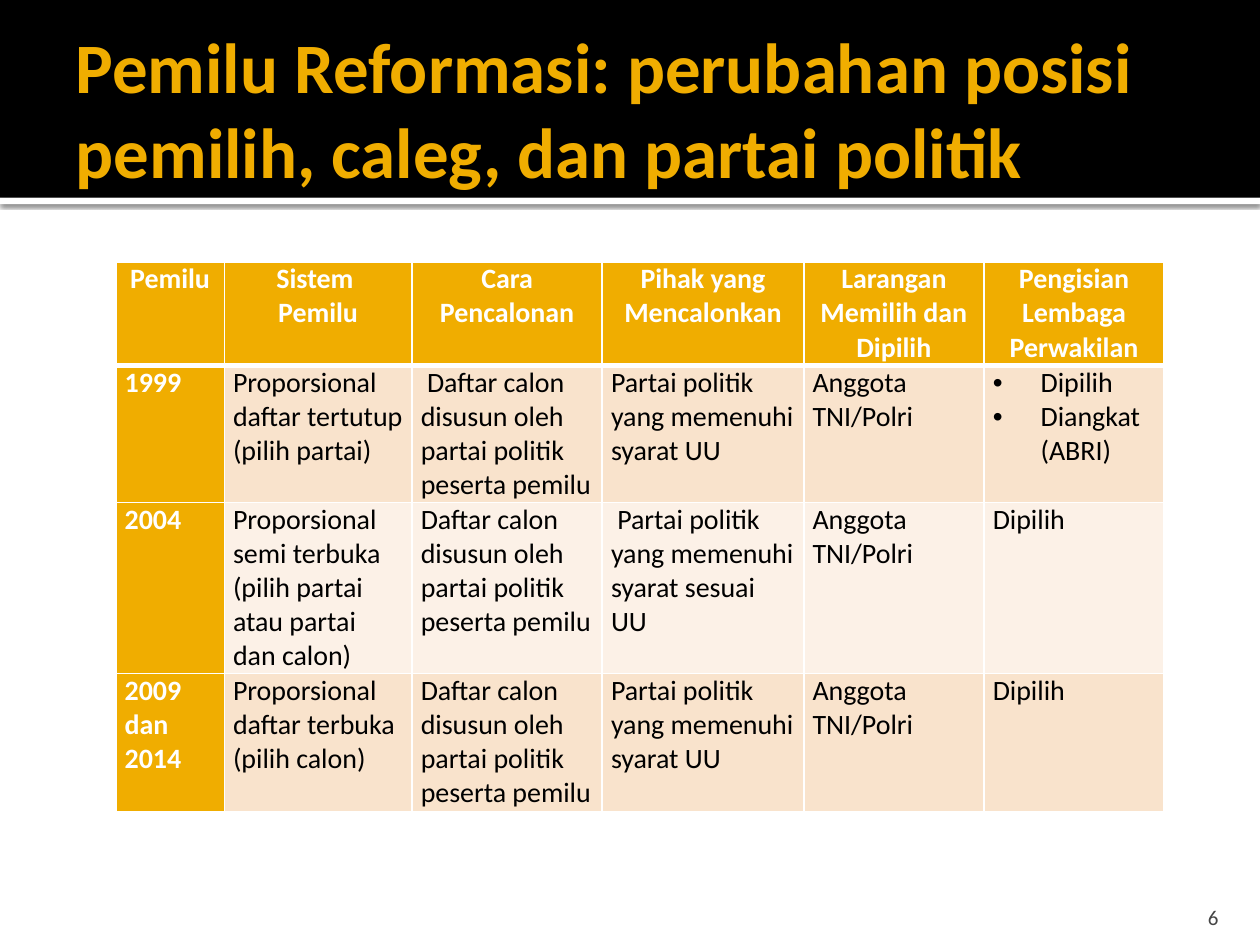
from dataclasses import dataclass

import pptx
import pptx.dml.color
import pptx.enum.shapes
import pptx.enum.text
import pptx.oxml
import pptx.oxml.ns
import pptx.util

RGBColor = pptx.dml.color.RGBColor
Inches = pptx.util.Inches
Pt = pptx.util.Pt
PP_ALIGN = pptx.enum.text.PP_ALIGN
MSO_ANCHOR = pptx.enum.text.MSO_ANCHOR

BLACK = RGBColor(0x00, 0x00, 0x00)
WHITE = RGBColor(0xFF, 0xFF, 0xFF)
GOLD = RGBColor(0xF0, 0xAD, 0x00)
PEACH = RGBColor(0xF9, 0xE3, 0xCC)
CREAM = RGBColor(0xFC, 0xF1, 0xE7)
GREY = RGBColor(0x45, 0x45, 0x45)
FONT = "Calibri"
NS = pptx.oxml.ns.nsdecls("a")

TITLE = "Pemilu Reformasi: perubahan posisi pemilih, caleg, dan partai politik"
CANDIDATES = "Daftar calon disusun oleh partai politik peserta pemilu"
PARTIES = "Partai politik yang memenuhi syarat UU"
BARRED = "Anggota TNI/Polri"
HEADERS = ["Pemilu", "Sistem \nPemilu", "Cara Pencalonan", "Pihak yang Mencalonkan",
           "Larangan Memilih dan Dipilih", "Pengisian Lembaga Perwakilan"]
COLUMN_WIDTHS = [0.86, 1.49, 1.51, 1.6, 1.43, 1.43]
ROW_HEIGHTS = [0.82, 0.82, 1.1, 1.1]


@dataclass
class Election:
    year: str
    system: str
    candidates: str = CANDIDATES
    parties: str = PARTIES
    barred: str = BARRED
    seats: str = "Dipilih"

    def cells(self) -> list[str]:
        return [self.year, self.system, self.candidates,
                self.parties, self.barred, self.seats]


@dataclass
class Bar:
    top: float
    height: float
    color: RGBColor
    shadow: bool = False


ELECTIONS = [
    Election("1999", "Proporsional daftar tertutup (pilih partai)",
             candidates=" " + CANDIDATES, seats="Dipilih\nDiangkat (ABRI)"),
    Election("2004", "Proporsional semi terbuka (pilih partai atau partai dan calon)",
             parties=" Partai politik yang memenuhi syarat sesuai UU"),
    Election("2009 dan 2014", "Proporsional daftar terbuka (pilih calon)"),
]
BARS = [Bar(1.57, 0.05, WHITE, shadow=True), Bar(0, 1.57, BLACK)]


def format_text(tf, size: float, color: RGBColor, bold: bool = False,
                align=PP_ALIGN.LEFT) -> None:
    for p in tf.paragraphs:
        p.alignment = align
        for r in p.runs:
            r.font.name, r.font.size, r.font.bold = FONT, Pt(size), bold
            r.font.color.rgb = color


def set_margins(box, left: float, top: float, right: float, bottom: float) -> None:
    box.margin_left, box.margin_top = Inches(left), Inches(top)
    box.margin_right, box.margin_bottom = Inches(right), Inches(bottom)


def add_bar(s, bar: Bar, width: int, layer: int) -> None:
    """Draw a full-width bar behind the placeholders."""
    sp = s.shapes.add_shape(pptx.enum.shapes.MSO_SHAPE.RECTANGLE, 0,
                            Inches(bar.top), width, Inches(bar.height))
    sp.shadow.inherit = False
    sp.fill.solid()
    sp.fill.fore_color.rgb = bar.color
    sp.line.fill.background()
    if bar.shadow:
        effects = sp.element.spPr.find(pptx.oxml.ns.qn("a:effectLst"))
        effects.append(pptx.oxml.parse_xml(
            f'<a:outerShdw {NS} blurRad="{Pt(2.5)}" dist="{Pt(0.8)}" dir="5400000" '
            'algn="tl" rotWithShape="0"><a:srgbClr val="000000">'
            '<a:alpha val="60000"/></a:srgbClr></a:outerShdw>'))
    s.shapes._spTree.insert(2 + layer, sp.element)


def set_borders(cell, row: int) -> None:
    """White rules, thicker between the header and the body."""
    widths = {"L": 1, "R": 1, "T": 3 if row == 1 else 1, "B": 3 if row == 0 else 1}
    tc_pr = cell._tc.get_or_add_tcPr()
    for i, (side, width) in enumerate(widths.items()):
        tc_pr.insert(i, pptx.oxml.parse_xml(
            f'<a:ln{side} {NS} w="{Pt(width)}"><a:solidFill>'
            f'<a:srgbClr val="{WHITE}"/></a:solidFill></a:ln{side}>'))


def add_bullets(tf) -> None:
    for p in tf.paragraphs:
        p_pr = p._p.get_or_add_pPr()
        p_pr.set("marL", str(Inches(0.38)))
        p_pr.set("indent", str(-Inches(0.38)))
        p_pr.append(pptx.oxml.parse_xml(f'<a:buFont {NS} typeface="Arial"/>'))
        p_pr.append(pptx.oxml.parse_xml(f'<a:buChar {NS} char="•"/>'))


def fill_cell(cell, text: str, row: int, col: int) -> None:
    heading = row == 0 or col == 0
    cell.text = text
    set_margins(cell, 0.07, 0, 0.07, 0)
    format_text(cell.text_frame, 16, WHITE if heading else BLACK, heading,
                PP_ALIGN.CENTER if row == 0 else PP_ALIGN.LEFT)
    if not heading and "\n" in text:
        add_bullets(cell.text_frame)
    cell.fill.solid()
    cell.fill.fore_color.rgb = GOLD if heading else PEACH if row % 2 else CREAM
    set_borders(cell, row)


def add_election_table(s) -> None:
    rows = [HEADERS] + [election.cells() for election in ELECTIONS]
    table = s.shapes.add_table(len(rows), len(HEADERS), Inches(0.92), Inches(2.08),
                               Inches(8.33), Inches(4.32)).table
    table.first_col = True
    for column, width in zip(table.columns, COLUMN_WIDTHS):
        column.width = Inches(width)
    for row, height in zip(table.rows, ROW_HEIGHTS):
        row.height = Inches(height)
    for i, texts in enumerate(rows):
        for j, text in enumerate(texts):
            fill_cell(table.cell(i, j), text, i, j)


def set_title(s) -> None:
    title = s.shapes.title
    title.left, title.top = Inches(0.5), Inches(0.17)
    title.width, title.height = Inches(9), Inches(1.37)
    tf = title.text_frame
    tf.text = TITLE
    tf.auto_size = pptx.enum.text.MSO_AUTO_SIZE.NONE
    tf.vertical_anchor = MSO_ANCHOR.MIDDLE
    set_margins(tf, 0.1, 0.05, 0.05, 0.05)
    format_text(tf, 40.5, GOLD, bold=True)


def add_page_number(s, number: str) -> None:
    tf = s.shapes.add_textbox(Inches(8.97), Inches(7.08),
                              Inches(0.8), Inches(0.3)).text_frame
    tf.text = number
    tf.word_wrap = True
    tf.vertical_anchor = MSO_ANCHOR.BOTTOM
    set_margins(tf, 0.1, 0.05, 0.1, 0)
    format_text(tf, 12, GREY, align=PP_ALIGN.RIGHT)


def main() -> None:
    prs = pptx.Presentation()
    prs.slide_width, prs.slide_height = Inches(10), Inches(7.5)
    s = prs.slides.add_slide(prs.slide_layouts.get_by_name("Title Only"))
    for layer, bar in enumerate(BARS):
        add_bar(s, bar, prs.slide_width, layer)
    set_title(s)
    add_election_table(s)
    add_page_number(s, "6")
    prs.save("out.pptx")


if __name__ == "__main__":
    main()
